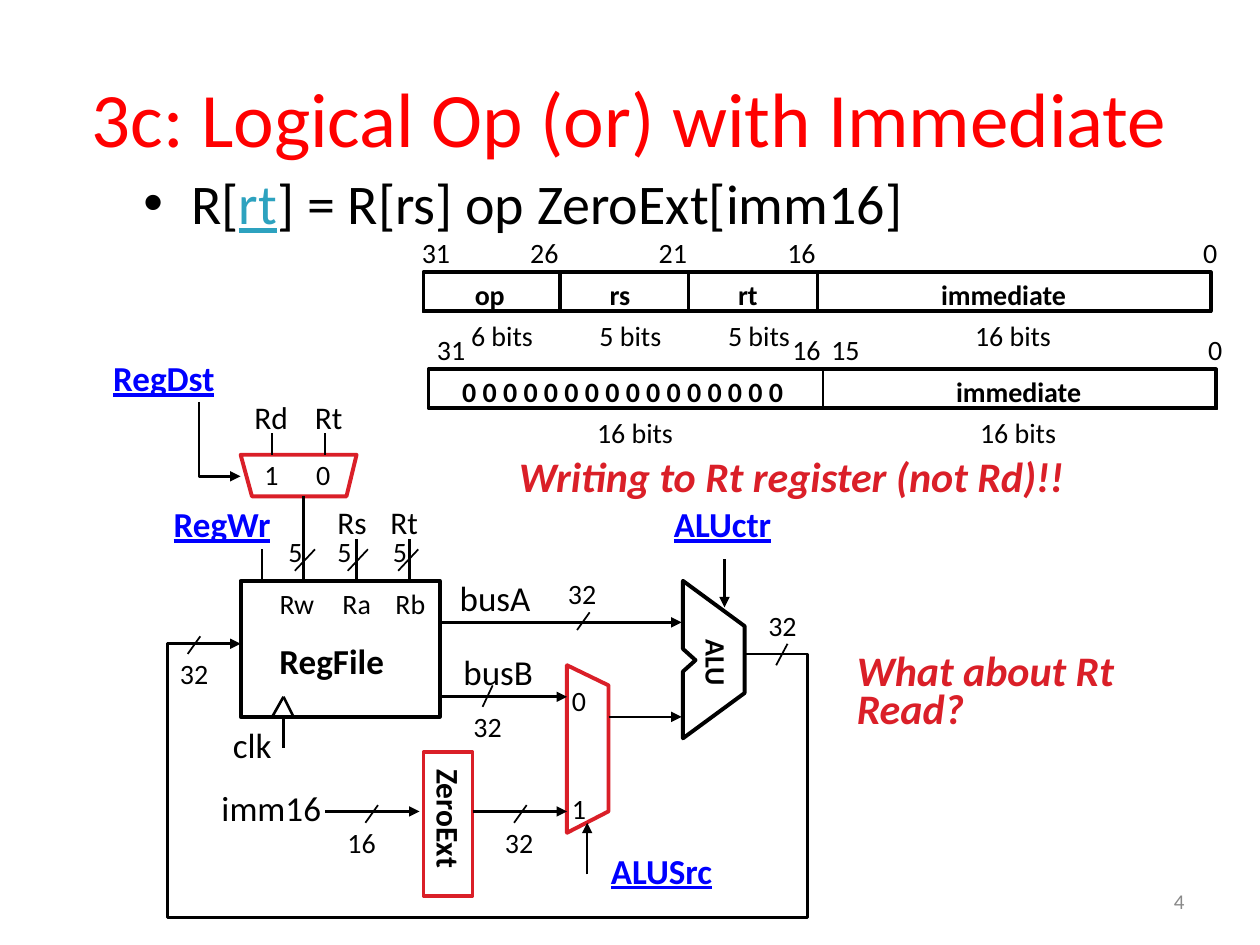
from dataclasses import dataclass

from lxml.etree import SubElement
from pptx import Presentation
from pptx.dml.color import RGBColor
from pptx.enum.shapes import MSO_CONNECTOR, MSO_SHAPE
from pptx.enum.text import MSO_ANCHOR, MSO_AUTO_SIZE, PP_ALIGN
from pptx.oxml.ns import qn
from pptx.util import Inches, Pt


@dataclass(frozen=True)
class Theme:
    font: str = "Calibri"
    black: str = "000000"
    title: str = "FF0000"
    accent: str = "DA1F28"
    control: str = "0000FF"
    target: str = "2DA2BF"
    muted: str = "898989"
    title_size: int = 44
    body_size: int = 32
    callout_size: int = 24
    signal_size: int = 20
    port_size: int = 18
    small_size: int = 16
    number_size: int = 12
    thin: float = 1
    wire: float = 1.5
    frame: float = 2
    outline: float = 2.25


THEME = Theme()
LABEL_HEIGHT = {16: 0.37, 18: 0.4, 20: 0.43, 24: 0.5}


def format_run(run, size, color=THEME.black, bold=False, italic=False, underline=False):
    font = run.font
    font.name, font.size = THEME.font, Pt(size)
    font.color.rgb = RGBColor.from_string(color)
    font.bold, font.italic, font.underline = bold, italic, underline


def add_text_box(slide, left, top, width, height):
    return slide.shapes.add_textbox(Inches(left), Inches(top), Inches(width), Inches(height))


def add_label(slide, text, left, top, width=None, size=THEME.small_size, rotation=0, **style):
    """One unwrapped line of text; the default width fits a short number."""
    width = width or 0.19 + 0.12 * len(text)
    shape = add_text_box(slide, left, top, width, LABEL_HEIGHT[size])
    frame = shape.text_frame
    frame.word_wrap = False
    frame.auto_size = MSO_AUTO_SIZE.SHAPE_TO_FIT_TEXT
    frame.text = text
    format_run(frame.paragraphs[0].runs[0], size, **style)
    shape.rotation = rotation
    return shape


def style_line(line, color, weight, arrow=False):
    line.color.rgb = RGBColor.from_string(color)
    line.width = Pt(weight)
    if arrow:
        SubElement(line._get_or_add_ln(), qn("a:tailEnd"), type="triangle")


def add_box(slide, left, top, width, height, color=THEME.black, weight=THEME.thin):
    shape = slide.shapes.add_shape(
        MSO_SHAPE.RECTANGLE, Inches(left), Inches(top), Inches(width), Inches(height))
    shape.shadow.inherit = False
    shape.fill.background()
    style_line(shape.line, color, weight)


def add_outline(slide, points, color=THEME.black, weight=THEME.outline, close=True, arrow=False):
    corners = [(Inches(x), Inches(y)) for x, y in points]
    builder = slide.shapes.build_freeform(*corners[0], scale=1.0)
    builder.add_line_segments(corners[1:], close=close)
    shape = builder.convert_to_shape()
    shape.shadow.inherit = False
    shape.fill.background()
    style_line(shape.line, color, weight, arrow)


def add_wire(slide, x1, y1, x2, y2, weight=THEME.wire, arrow=False):
    wire = slide.shapes.add_connector(
        MSO_CONNECTOR.STRAIGHT, Inches(x1), Inches(y1), Inches(x2), Inches(y2))
    style_line(wire.line, THEME.black, weight, arrow)
    SubElement(wire._element.spPr, qn("a:effectLst"))


def add_word(slide, left, top, cells, names, bits, widths):
    """A 32-bit word: frame, cells, field names, bit numbers above, widths below."""
    add_box(slide, left, top, 6.25, 0.31, weight=THEME.frame)
    for cell_left, cell_width in cells:
        add_box(slide, cell_left, top, cell_width, 0.32)
    for name, name_left, name_width in names:
        add_label(slide, name, name_left, top - 0.01, name_width, bold=True)
    for bit, bit_left in bits:
        add_label(slide, bit, bit_left, top - 0.34)
    for text, text_left, text_width in widths:
        add_label(slide, text, text_left, top + 0.32, text_width)


def add_heading(slide):
    title = slide.shapes.title
    title.left, title.top = Inches(0.5), Inches(0.3)
    title.width, title.height = Inches(9), Inches(1.25)
    title.text_frame.text = "3c: Logical Op (or) with Immediate"
    title.text_frame.vertical_anchor = MSO_ANCHOR.MIDDLE
    paragraph = title.text_frame.paragraphs[0]
    paragraph.alignment = PP_ALIGN.CENTER
    format_run(paragraph.runs[0], THEME.title_size, THEME.title)


def add_bullet(slide):
    frame = add_text_box(slide, 1.04, 1.29, 8.96, 0.45).text_frame
    frame.word_wrap = True
    paragraph = frame.paragraphs[0]
    properties = paragraph._p.get_or_add_pPr()
    properties.set("marL", str(Inches(0.38)))
    properties.set("indent", str(Inches(-0.38)))
    SubElement(properties, qn("a:buFont"), typeface="Arial")
    SubElement(properties, qn("a:buChar"), char="•")
    for text in ("R[", "rt", "] = R[rs] op ZeroExt[imm16]"):
        run = paragraph.add_run()
        run.text = text
        is_target = text == "rt"
        format_run(run, THEME.body_size, THEME.target if is_target else THEME.black,
                   underline=is_target)


def add_words(slide):
    add_word(slide, 3.36, 2.16,
             cells=[(3.36, 1.08), (4.45, 1.01), (5.47, 1.01), (6.49, 3.12)],
             names=[("op", 3.67, 0.44), ("rs", 4.74, 0.37), ("rt", 5.76, 0.37),
                    ("immediate", 7.37, 1.21)],
             bits=[("31", 3.25), ("26", 4.11), ("21", 5.13), ("16", 6.15), ("0", 9.45)],
             widths=[("6 bits", 3.64, 0.7), ("5 bits", 4.66, 0.7), ("5 bits", 5.68, 0.7),
                     ("16 bits", 7.64, 0.81)])
    add_word(slide, 3.4, 2.93,
             cells=[(6.53, 3.13)],
             names=[(" ".join("0" * 16), 3.57, 2.81), ("immediate", 7.49, 1.21)],
             bits=[("31", 3.37), ("16", 6.19), ("15", 6.5), ("0", 9.49)],
             widths=[("16 bits", 4.64, 0.81), ("16 bits", 7.68, 0.81)])


def add_blocks(slide):
    add_box(slide, 1.91, 4.61, 1.58, 1.08, weight=THEME.outline)
    add_box(slide, 3.36, 5.97, 0.39, 1.14, THEME.accent, THEME.frame)
    destination_mux = [(1.91, 3.61), (2, 3.94), (2.75, 3.94), (2.83, 3.61)]
    source_mux = [(4.5, 5.28), (4.5, 6.61), (4.83, 6.44), (4.83, 5.44)]
    for mux in (destination_mux, source_mux):
        add_outline(slide, mux, THEME.accent)
    add_outline(slide, [(5.42, 4.61), (5.42, 5.15), (5.52, 5.24), (5.42, 5.33),
                        (5.42, 5.86), (5.91, 5.5), (5.91, 4.97)])
    add_label(slide, "RegFile", 2.12, 5.03, 1.04, THEME.signal_size, bold=True)
    add_label(slide, "ZeroExt", 3.07, 6.3, 0.99, THEME.port_size, rotation=90, bold=True)
    add_label(slide, "ALU", 5.39, 5.09, 0.59, rotation=90, bold=True)


def add_wires(slide):
    for x in (2.16, 2.58):
        add_wire(slide, x, 3.44, x, 3.61, THEME.thin)
    for x, top in ((2.08, 4.36), (2.41, 3.94), (2.83, 4.28), (3.25, 4.28)):
        add_wire(slide, x, top, x, 4.61)
    for clock_wire in ((2.25, 5.53, 2.16, 5.69), (2.25, 5.53, 2.33, 5.69),
                       (2.25, 5.69, 2.25, 5.94)):
        add_wire(slide, *clock_wire)
    for start, end, y in ((3.5, 5.41, 4.94), (3.5, 4.5, 5.53), (4.83, 5.41, 5.69),
                          (3.75, 4.5, 6.44), (2.58, 3.33, 6.44)):
        add_wire(slide, start, y, end, y, arrow=True)
    for x, start, end in ((5.75, 4.44, 4.82), (4.66, 6.94, 6.53)):
        add_wire(slide, x, start, x, end, arrow=True)
    select = [(1.58, 3.19), (1.58, 3.78), (1.91, 3.78)]
    write_back = [(5.91, 5.19), (6.41, 5.19), (6.41, 7.28), (1.33, 7.28),
                  (1.33, 5.11), (1.91, 5.11)]
    for route in (select, write_back):
        add_outline(slide, route, weight=THEME.wire, close=False, arrow=True)


def add_bus_widths(slide):
    """Slashes across the buses, given by their lower left end, and bit counts."""
    for x, y, run, rise in ((1.49, 5.19, 0.1, 0.14), (4.58, 5, 0.1, 0.14),
                            (3.83, 5.61, 0.08, 0.17), (2.34, 4.53, 0.16, 0.17),
                            (2.76, 4.53, 0.16, 0.17), (3.16, 4.53, 0.16, 0.17),
                            (4.08, 6.53, 0.1, 0.14), (2.9, 6.53, 0.1, 0.14),
                            (6.16, 5.28, 0.09, 0.17)):
        add_wire(slide, x, y, x + run, y - rise, THEME.thin)
    for text, left, top in (("32", 1.33, 5.16), ("32", 4.41, 4.53), ("32", 3.66, 5.58),
                            ("32", 6, 4.78), ("32", 3.91, 6.5), ("16", 2.66, 6.5),
                            ("5", 2.19, 4.19), ("5", 2.58, 4.19), ("5", 3.02, 4.19),
                            ("1", 2, 3.58), ("0", 2.41, 3.58), ("0", 4.44, 5.38),
                            ("1", 4.44, 6.23)):
        add_label(slide, text, left, top)


def add_signal_names(slide):
    for name, left, top, width in (("RegDst", 0.8, 2.78, 1.03), ("RegWr", 1.28, 3.94, 0.99),
                                   ("ALUctr", 5.25, 3.94, 1.14), ("ALUSrc", 4.75, 6.69, 1.04)):
        add_label(slide, name, left, top, width, THEME.signal_size,
                  color=THEME.control, bold=True, underline=True)
    for name, left, top, width in (("busA", 3.55, 4.53, 0.78), ("busB", 3.58, 5.11, 0.77),
                                   ("clk", 1.75, 5.69, 0.51), ("imm16", 1.66, 6.19, 1)):
        add_label(slide, name, left, top, width, THEME.signal_size)
    for name, left, top, width in (("Rd", 1.92, 3.11, 0.47), ("Rt", 2.4, 3.11, 0.43),
                                   ("Rs", 2.58, 3.94, 0.44), ("Rt", 3, 3.94, 0.43)):
        add_label(slide, name, left, top, width, THEME.port_size)
    for name, left, width in (("Rw", 2.12, 0.48), ("Ra", 2.62, 0.44), ("Rb", 3.04, 0.46)):
        add_label(slide, name, left, 4.61, width)


def add_callouts(slide):
    style = dict(size=THEME.callout_size, color=THEME.accent, bold=True, italic=True)
    add_label(slide, "Writing to Rt register (not Rd)!!", 4.02, 3.53, 4.62, **style)
    question = add_label(slide, "What about Rt Read?", 6.73, 5.18, 2.93, **style)
    question.height = Inches(0.68)
    frame = question.text_frame
    frame.word_wrap = True
    frame.margin_left = frame.margin_right = Inches(0.07)
    frame.margin_top = frame.margin_bottom = Inches(0.03)
    frame.paragraphs[0].line_spacing = 0.75


def add_slide_number(slide):
    frame = add_text_box(slide, 7.17, 6.95, 2.33, 0.4).text_frame
    frame.text = "4"
    frame.word_wrap = True
    frame.vertical_anchor = MSO_ANCHOR.MIDDLE
    frame.paragraphs[0].alignment = PP_ALIGN.RIGHT
    format_run(frame.paragraphs[0].runs[0], THEME.number_size, THEME.muted)


def main():
    presentation = Presentation()
    presentation.slide_width, presentation.slide_height = Inches(10), Inches(7.5)
    slide = presentation.slides.add_slide(presentation.slide_layouts[5])
    for add_part in (add_heading, add_bullet, add_words, add_blocks, add_wires,
                     add_bus_widths, add_signal_names, add_callouts, add_slide_number):
        add_part(slide)
    presentation.save("out.pptx")


if __name__ == "__main__":
    main()
